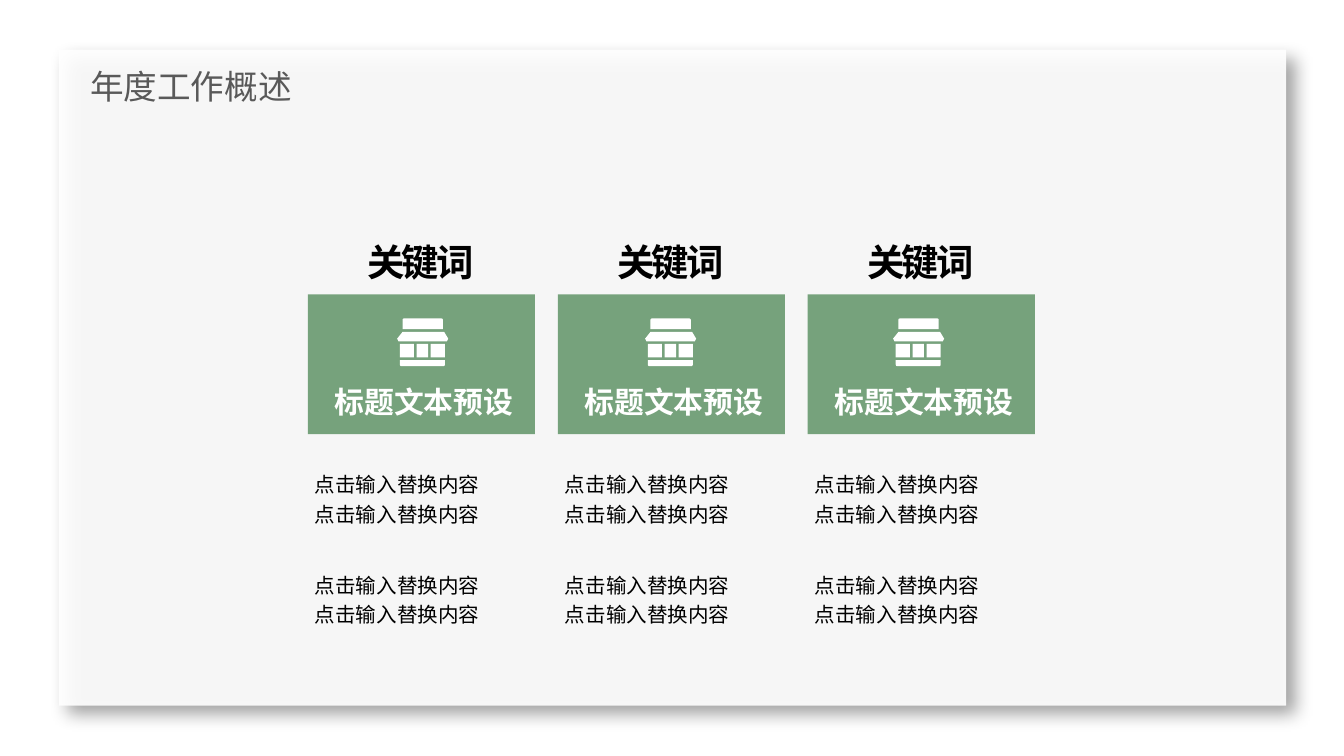
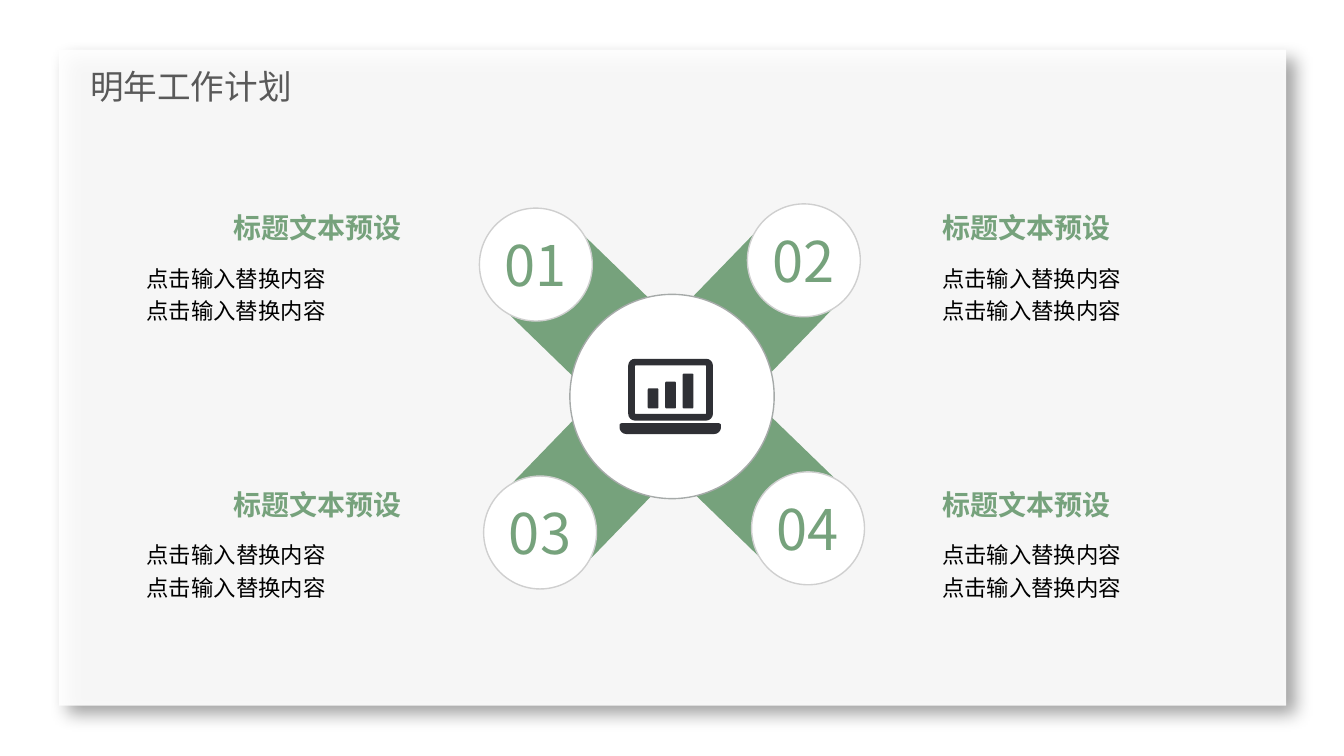
import math
from dataclasses import dataclass
from typing import Any

import pptx
import pptx.util
import pptx.dml.color
import pptx.enum.shapes
import pptx.enum.text
import pptx.oxml
import pptx.oxml.ns

RGB = pptx.dml.color.RGBColor
FORM = pptx.enum.shapes.MSO_SHAPE
ALIGN = pptx.enum.text.PP_ALIGN
ANCHOR = pptx.enum.text.MSO_ANCHOR
FIT = pptx.enum.text.MSO_AUTO_SIZE
Pt = pptx.util.Pt
Point = tuple[float, float]

# Palette and font
GREEN = RGB(0x76, 0xA2, 0x7C)
WHITE = RGB(0xFF, 0xFF, 0xFF)
BLACK = RGB(0, 0, 0)
GREY = RGB(0x59, 0x59, 0x59)
INK = RGB(0x2F, 0x30, 0x35)
RIM = RGB(0xCF, 0xCF, 0xCF)
EDGE = RGB(0xA6, 0xAA, 0xA9)
FACE = "Noto Sans CJK SC"

# Square grid: 100 columns across the slide, rows of the same size
WIDE = pptx.util.Inches(10)
HIGH = WIDE * 9 // 16
CELL = WIDE // 100

HEAD = "标题文本预设"
BODY = ["点击输入替换内容"] * 2


@dataclass(frozen=True)
class Style:
    """Text format; pad holds side and top insets in cells."""
    size: float
    color: RGB
    bold: bool = False
    align: Any = ALIGN.LEFT
    anchor: Any = ANCHOR.MIDDLE
    pad: Point = (1, 0.5)
    lead: float = 1.0
    track: int = 0
    wrap: bool = True
    grow: bool = False


@dataclass(frozen=True)
class Card:
    left: float
    shop: float
    wide: float


@dataclass(frozen=True)
class Note:
    left: float
    top: float
    wide: float
    head: Style


TITLE = Style(18, GREY, pad=(0, 0.5))
KEY = Style(20, BLACK, bold=True, align=ALIGN.CENTER, track=-150)
LABEL = Style(16, WHITE, bold=True, align=ALIGN.CENTER)
LINES = Style(11, BLACK, lead=1.2, grow=True)
PLAIN = Style(12, BLACK, anchor=ANCHOR.TOP, pad=(0, 0), lead=1.2)
LEFT = Style(15, GREEN, bold=True, pad=(0, 0), wrap=False)
RIGHT = Style(15, GREEN, bold=True, align=ALIGN.RIGHT, pad=(0, 0), wrap=False)
DIGIT = Style(30, GREEN, align=ALIGN.CENTER, pad=(0.3, 0.3))

CARDS = [Card(22.9 + 18.6 * i, 29.55 + 18.45 * i, wide)
         for i, wide in enumerate((17.7, 21.5, 17.7))]
NOTES = [
    Note(70.1, 14.5, 22.5, LEFT),
    Note(70.1, 35.1, 25.6, LEFT),
    Note(10.9, 14.5, 22.7, RIGHT),
    Note(10.9, 35.1, 23.9, RIGHT),
]

# Hub with four arms, a quarter turn apart
HUB = (50, 29.5)
CORE, DISC, REACH, TURN = 7.6, 4.2, 14.1, 44.1
ARM, BITE = 8.1, 6.67
SPOKES = ["04", "03", "01", "02"]


def grid(*cells: float) -> list[int]:
    return [round(n * CELL) for n in cells]


def write(shape: Any, lines: list[str], style: Style) -> None:
    frame = shape.text_frame
    side, top = grid(*style.pad)
    form = {
        "word_wrap": style.wrap, "vertical_anchor": style.anchor,
        "margin_left": side, "margin_right": side,
        "margin_top": top, "margin_bottom": top,
        "auto_size": FIT.SHAPE_TO_FIT_TEXT if style.grow else FIT.NONE,
    }
    for name, value in form.items():
        setattr(frame, name, value)
    for i, line in enumerate(lines):
        para = frame.add_paragraph() if i else frame.paragraphs[0]
        para.alignment = style.align
        para.line_spacing = style.lead
        run = para.add_run()
        run.text = line
        look = {"name": FACE, "size": Pt(style.size), "bold": style.bold}
        for name, value in look.items():
            setattr(run.font, name, value)
        run.font.color.rgb = style.color
        props = run._r.get_or_add_rPr()
        east = props.makeelement(pptx.oxml.ns.qn("a:ea"), {"typeface": FACE})
        props.append(east)
        if style.track:
            props.set("spc", str(style.track))


def label(shapes: Any, left: float, top: float, wide: float, high: float,
          lines: list[str], style: Style) -> None:
    write(shapes.add_textbox(*grid(left, top, wide, high)), lines, style)


def paint(shape: Any, fill: RGB, line: RGB | None = None) -> Any:
    shape.shadow.inherit = False
    shape.fill.solid()
    shape.fill.fore_color.rgb = fill
    if line is None:
        shape.line.fill.background()
    else:
        shape.line.color.rgb = line
        shape.line.width = Pt(0.75)
    return shape


def disc(shapes: Any, x: float, y: float, r: float, line: RGB) -> Any:
    area = grid(x - r, y - r, 2 * r, 2 * r)
    return paint(shapes.add_shape(FORM.OVAL, *area), WHITE, line)


def arc(x: float, y: float, r: float, start: float, end: float,
        steps: int = 4) -> list[Point]:
    turns = [math.radians(start + (end - start) * i / steps)
             for i in range(steps + 1)]
    return [(x + r * math.cos(t), y + r * math.sin(t)) for t in turns]


def box(x: float, y: float, w: float, h: float,
        top: float = 0, base: float = 0) -> list[Point]:
    """Rectangle with its own corner radius above and below."""
    spots = [(x + top, y + top, top), (x + w - top, y + top, top),
             (x + w - base, y + h - base, base), (x + base, y + h - base, base)]
    points: list[Point] = []
    for i, (cx, cy, r) in enumerate(spots):
        start = 180 + 90 * i
        points += arc(cx, cy, r, start, start + 90) if r else [(cx, cy)]
    return points


def trace(shapes: Any, x: float, y: float, loops: list[list[Point]],
          fill: RGB) -> None:
    """One filled outline made of closed loops, placed at x, y."""
    paths = [[tuple(grid(x + px, y + py)) for px, py in loop] for loop in loops]
    pen = shapes.build_freeform(*paths[0][0])
    for i, path in enumerate(paths):
        if i:
            pen.move_to(*path[0])
        pen.add_line_segments(path[1:], close=True)
    paint(pen.convert_to_shape(), fill)


# Icons
SHOP = [
    box(0.4, 0, 3, 0.8, top=0.1),
    [(0.4, 1), (3.5, 1), (3.8, 1.5), (3.7, 1.7), (0.1, 1.7), (0, 1.5)],
    *[box(left, 1.9, wide, 1) for left, wide in
      ((0.2, 1.05), (1.45, 0.85), (2.5, 1.05))],
    box(0.2, 3.1, 3.35, 0.45, base=0.12),
]
LAPTOP = [
    box(0.65, 0, 6.3, 4.6, 0.5, 0.5),
    box(1.15, 0.5, 5.3, 3.6, 0.05, 0.05)[::-1],
    *[box(2.1 + 1.3 * i, 3.7 - high, 0.8, high, 0.1, 0.1)
      for i, high in enumerate((1.5, 2, 2.6))],
    box(0, 4.8, 7.55, 0.8, 0.15, 0.5),
]


def panel(slide: Any, layout: Any) -> None:
    """Raised sheet, kept on the layout so that every slide shows it."""
    area = grid(4.4, 3.7, 91.3, 48.8)
    sheet = paint(slide.shapes.add_shape(FORM.RECTANGLE, *area), WHITE)
    space = pptx.oxml.ns.nsdecls("a")
    tint = sheet.element.spPr.find(".//" + pptx.oxml.ns.qn("a:srgbClr"))
    tint.append(pptx.oxml.parse_xml(f'<a:alpha {space} val="91000"/>'))
    glow = sheet.element.spPr.find(pptx.oxml.ns.qn("a:effectLst"))
    glow.append(pptx.oxml.parse_xml(
        f'<a:outerShdw {space} blurRad="{Pt(9)}" dist="{Pt(7)}" '
        f'dir="{45 * 60000}" algn="tl" rotWithShape="0">'
        '<a:srgbClr val="000000"><a:alpha val="40000"/></a:srgbClr>'
        '</a:outerShdw>'))
    layout.shapes.element.append(sheet.element)


def title(slide: Any, text: str) -> None:
    label(slide.shapes, 6.7, 4.3, 23.3, 4.2, [text], TITLE)


def review(slide: Any) -> None:
    for card in CARDS:
        shapes = slide.shapes.add_group_shape().shapes
        area = grid(card.left, 21.9, 16.9, 10.4)
        paint(shapes.add_shape(FORM.RECTANGLE, *area), GREEN)
        label(shapes, card.left, 17.8, 16.8, 3.3, ["关键词"], KEY)
        label(shapes, card.left + 0.45, 28.4, 16.4, 3, [HEAD], LABEL)
        for top in (34.2, 41.7):
            label(shapes, card.left - 0.45, top, card.wide, 5.5, BODY, LINES)
        trace(shapes, card.shop, 23.7, SHOP, WHITE)
    title(slide, "年度工作概述")


def arm(shapes: Any, turn: float) -> None:
    """Square blade whose inner side is cut by an arc around the hub."""
    half = math.degrees(math.asin(ARM / 2 / BITE))
    inner = arc(0, 0, BITE, turn - half, turn + half, 8)
    way = math.radians(turn)
    dx, dy = ARM * math.cos(way), ARM * math.sin(way)
    outer = [(x + dx, y + dy) for x, y in (inner[-1], inner[0])]
    trace(shapes, *HUB, [inner + outer], GREEN)


def plan(slide: Any) -> None:
    shapes = slide.shapes.add_group_shape().shapes
    for i, number in enumerate(SPOKES):
        turn = TURN + 90 * i
        arm(shapes, turn)
        x, y = arc(*HUB, REACH, turn, turn, 1)[0]
        write(disc(shapes, x, y, DISC, RIM), [number], DIGIT)
    disc(shapes, *HUB, CORE, EDGE)
    trace(shapes, 46.1, 26.7, LAPTOP, INK)
    for note in NOTES:
        label(slide.shapes, note.left, note.top + 4.8, note.wide, 10.3,
              BODY, PLAIN)
        label(slide.shapes, note.left, note.top, 19, 4.8, [HEAD], note.head)
    title(slide, "明年工作计划")


def main() -> None:
    deck = pptx.Presentation()
    deck.slide_width, deck.slide_height = WIDE, HIGH
    blank = deck.slide_layouts[6]
    first, second = (deck.slides.add_slide(blank) for _ in range(2))
    panel(first, blank)
    review(first)
    plan(second)
    deck.save("out.pptx")


if __name__ == "__main__":
    main()
